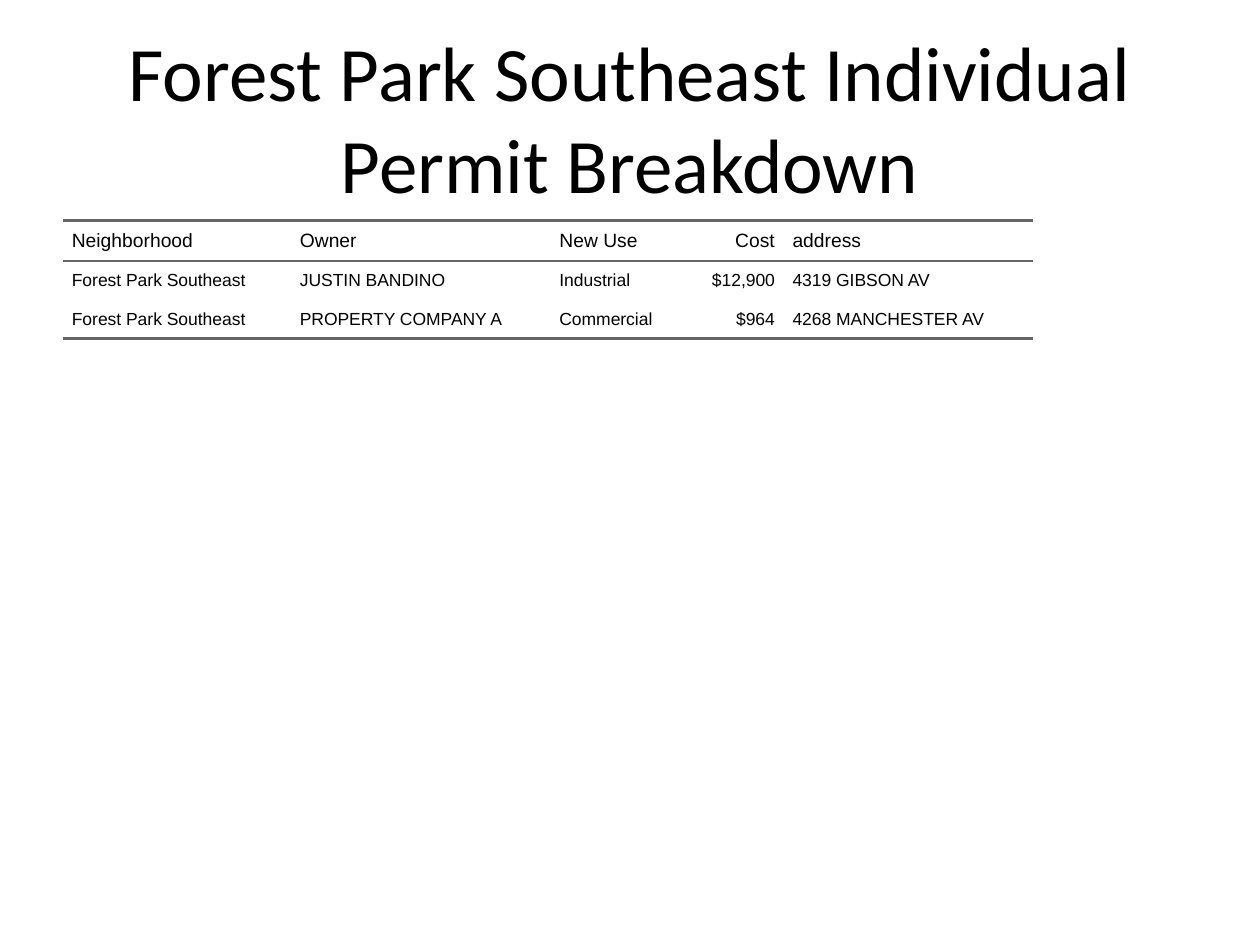
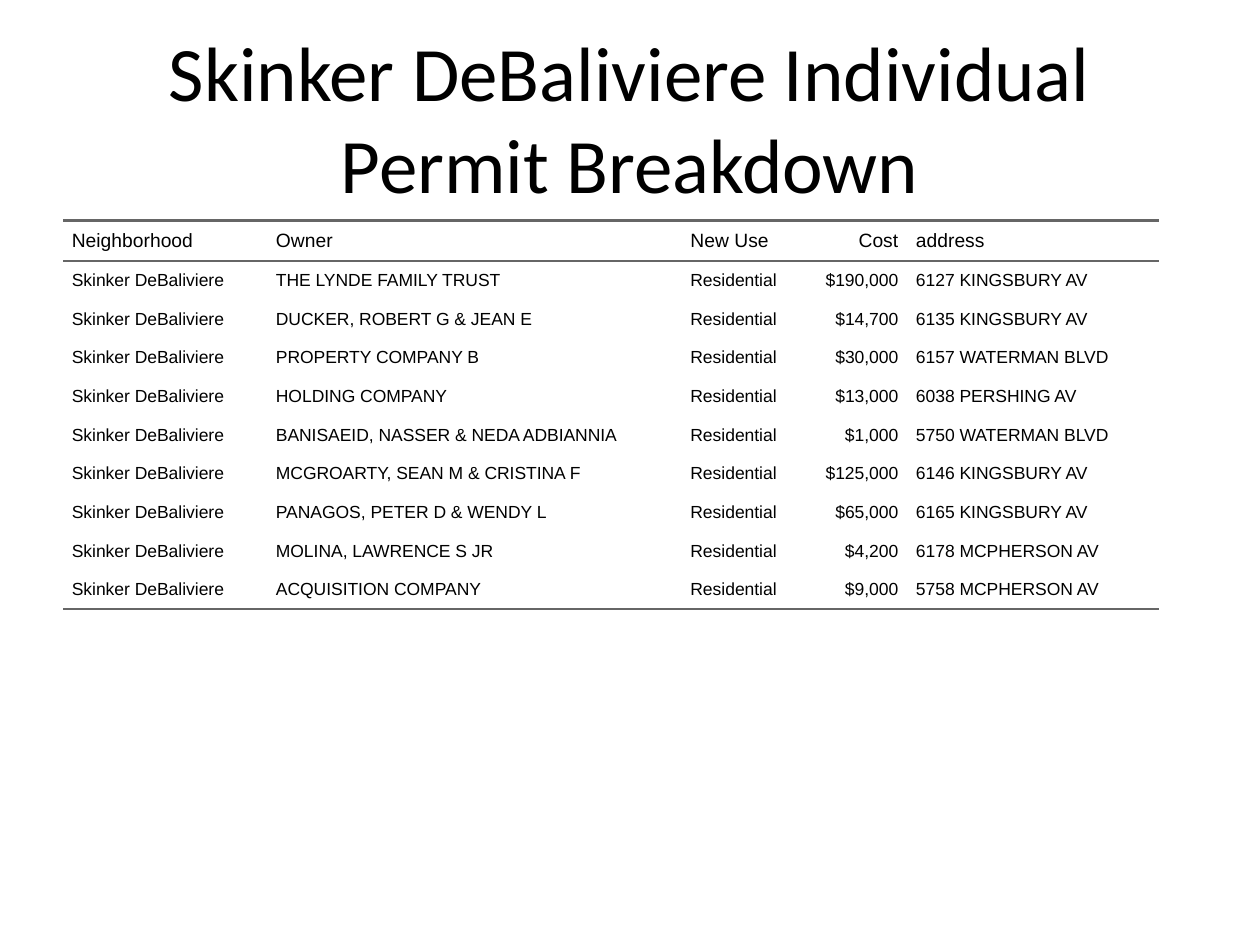
from dataclasses import dataclass
from typing import NamedTuple

from lxml import etree
from pptx import Presentation
from pptx import util as u
from pptx.dml.color import RGBColor
from pptx.enum import text
from pptx.oxml.ns import qn

EMU_PER_PX = 9144  # 100 px to the inch
NO_STYLE_NO_GRID = "{2D5ABB26-0587-4C30-8999-92F81FD0307C}"


def px(length: int) -> u.Emu:
    return u.Emu(length * EMU_PER_PX)


@dataclass(frozen=True)
class Theme:
    background: str = "FFFFFF"
    ink: str = "000000"
    rule: str = "666666"
    rule_width: float = 1.5
    title_font: str = "Calibri"
    table_font: str = "Arial"
    title_size: int = 44
    header_size: int = 11
    body_size: int = 10
    cell_spacing: int = 5
    cell_padding: int = 7


class Box(NamedTuple):
    left: int
    top: int
    width: int
    height: int


class Permit(NamedTuple):
    owner: str
    new_use: str
    cost: int
    address: str


@dataclass(frozen=True)
class Breakdown:
    neighborhood: str
    column_widths: tuple[int, ...]
    permits: tuple[Permit, ...]


THEME = Theme()
SLIDE_WIDTH, SLIDE_HEIGHT = 1000, 750
TITLE_BOX = Box(50, 30, 900, 125)
TABLE_BOX = Box(50, 175, 900, 495)
ROW_HEIGHT = 25
HEADERS = ("Neighborhood", "Owner", "New Use", "Cost", "address")
COST_COLUMN = HEADERS.index("Cost")

BREAKDOWNS = (
    Breakdown("Forest Park Southeast", (181, 206, 110, 75, 198), (
        Permit("JUSTIN BANDINO", "Industrial", 12900, "4319 GIBSON AV"),
        Permit("PROPERTY COMPANY A", "Commercial", 964, "4268 MANCHESTER AV"),
    )),
    Breakdown("Skinker DeBaliviere", (162, 329, 104, 75, 200), (
        Permit("THE LYNDE FAMILY TRUST", "Residential", 190000, "6127 KINGSBURY AV"),
        Permit("DUCKER, ROBERT G & JEAN E", "Residential", 14700, "6135 KINGSBURY AV"),
        Permit("PROPERTY COMPANY B", "Residential", 30000, "6157 WATERMAN BLVD"),
        Permit("HOLDING COMPANY", "Residential", 13000, "6038 PERSHING AV"),
        Permit("BANISAEID, NASSER & NEDA ADBIANNIA", "Residential", 1000,
               "5750 WATERMAN BLVD"),
        Permit("MCGROARTY, SEAN M & CRISTINA F", "Residential", 125000,
               "6146 KINGSBURY AV"),
        Permit("PANAGOS, PETER D & WENDY L", "Residential", 65000, "6165 KINGSBURY AV"),
        Permit("MOLINA, LAWRENCE S JR", "Residential", 4200, "6178 MCPHERSON AV"),
        Permit("ACQUISITION COMPANY", "Residential", 9000, "5758 MCPHERSON AV"),
    )),
)


def write_text(frame, content: str, *, font: str, size: int,
               align: text.PP_ALIGN = text.PP_ALIGN.LEFT,
               spacing: int = 0, indent: int = 0) -> None:
    """Fill a text frame with one paragraph, indented equally on both sides."""
    frame.word_wrap = True
    paragraph = frame.paragraphs[0]
    paragraph.alignment = align
    paragraph.space_before = paragraph.space_after = u.Pt(spacing)
    properties = paragraph._p.get_or_add_pPr()
    for side in ("marL", "marR"):
        properties.set(side, str(px(indent)))
    run = paragraph.add_run()
    run.text = content
    run.font.name = font
    run.font.size = u.Pt(size)
    run.font.color.rgb = RGBColor.from_string(THEME.ink)


def add_title(slide, content: str) -> None:
    frame = slide.shapes.add_textbox(*map(px, TITLE_BOX)).text_frame
    frame.vertical_anchor = text.MSO_ANCHOR.MIDDLE
    write_text(frame, content, font=THEME.title_font, size=THEME.title_size,
               align=text.PP_ALIGN.CENTER)


def add_rule(cell, edge: str) -> None:
    """Draw a cell border; edge is lnT or lnB."""
    line = etree.SubElement(cell._tc.get_or_add_tcPr(), qn(f"a:{edge}"),
                            w=str(u.Pt(THEME.rule_width)))
    fill = etree.SubElement(line, qn("a:solidFill"))
    etree.SubElement(fill, qn("a:srgbClr"), val=THEME.rule)


def format_cell(cell, content: str, *, header: bool, last: bool, numeric: bool) -> None:
    cell.margin_left = cell.margin_right = 0
    cell.margin_top = cell.margin_bottom = px(THEME.cell_padding)
    cell.vertical_anchor = text.MSO_ANCHOR.MIDDLE
    if header:
        add_rule(cell, "lnT")
    if header or last:
        add_rule(cell, "lnB")
    cell.fill.background()
    write_text(cell.text_frame, content, font=THEME.table_font,
               size=THEME.header_size if header else THEME.body_size,
               align=text.PP_ALIGN.RIGHT if numeric else text.PP_ALIGN.LEFT,
               spacing=THEME.cell_spacing, indent=THEME.cell_padding)


def add_permit_table(slide, breakdown: Breakdown) -> None:
    rows = [HEADERS] + [
        (breakdown.neighborhood, permit.owner, permit.new_use,
         f"${permit.cost:,}", permit.address)
        for permit in breakdown.permits
    ]
    frame = slide.shapes.add_table(len(rows), len(HEADERS), *map(px, TABLE_BOX))
    table = frame.table
    table.first_row = table.horz_banding = False
    table._tbl.tblPr.find(qn("a:tableStyleId")).text = NO_STYLE_NO_GRID
    for column, width in zip(table.columns, breakdown.column_widths):
        column.width = px(width)
    for row_index, values in enumerate(rows):
        table.rows[row_index].height = px(ROW_HEIGHT)
        for column_index, value in enumerate(values):
            format_cell(table.cell(row_index, column_index), value,
                        header=row_index == 0, last=row_index == len(rows) - 1,
                        numeric=column_index == COST_COLUMN)
    frame.width, frame.height = px(TABLE_BOX.width), px(TABLE_BOX.height)


def add_breakdown_slide(presentation, breakdown: Breakdown) -> None:
    slide = presentation.slides.add_slide(presentation.slide_layouts[6])
    slide.background.fill.solid()
    slide.background.fill.fore_color.rgb = RGBColor.from_string(THEME.background)
    add_title(slide, f"{breakdown.neighborhood} Individual Permit Breakdown")
    add_permit_table(slide, breakdown)


def main() -> None:
    presentation = Presentation()
    presentation.slide_width = px(SLIDE_WIDTH)
    presentation.slide_height = px(SLIDE_HEIGHT)
    for breakdown in BREAKDOWNS:
        add_breakdown_slide(presentation, breakdown)
    presentation.save("out.pptx")


if __name__ == "__main__":
    main()
